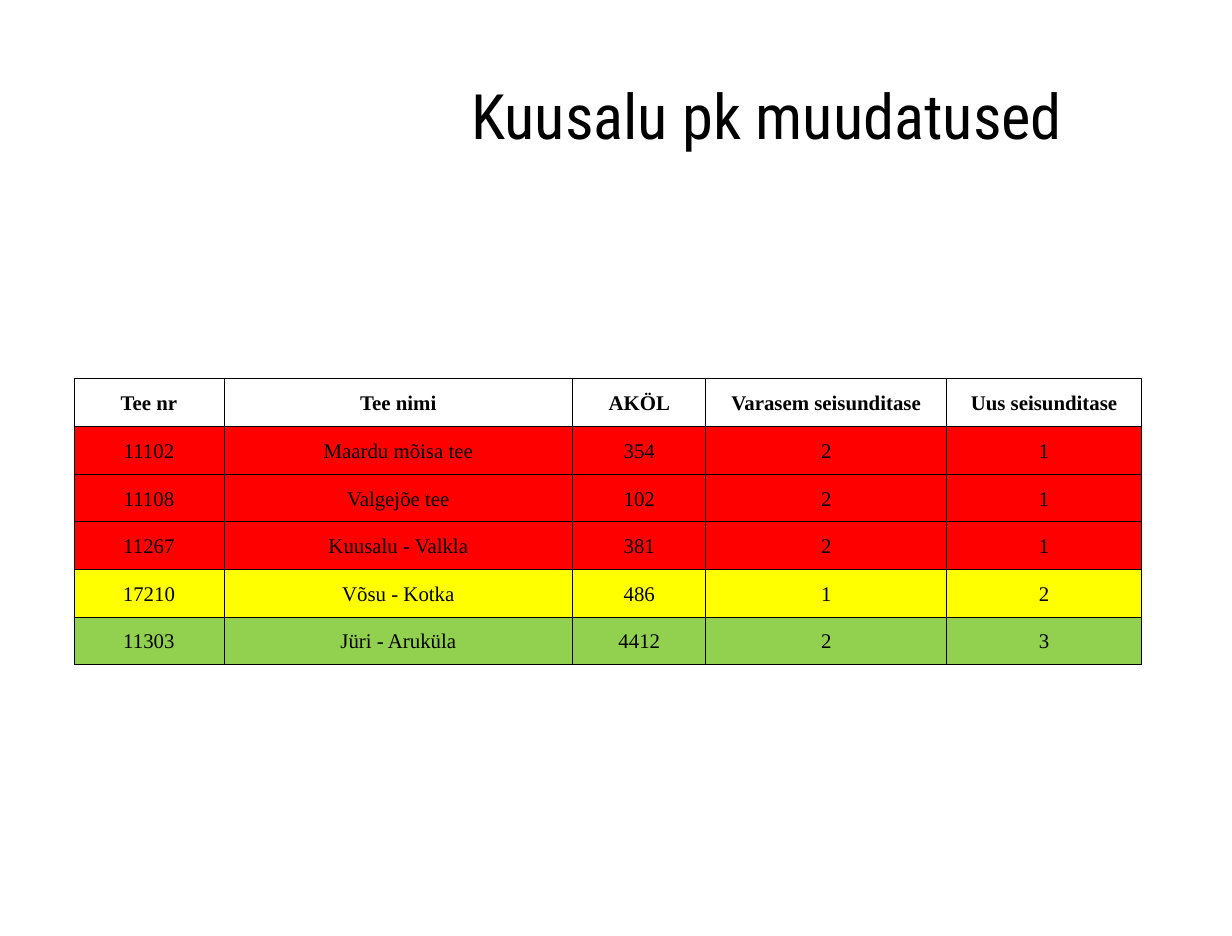
"""Build the slide listing road maintenance level changes in Kuusalu."""
from dataclasses import dataclass

from lxml.etree import SubElement
from pptx import Presentation
from pptx.dml.color import RGBColor as Color
from pptx.enum.text import MSO_ANCHOR as Anchor, MSO_AUTO_SIZE as AutoSize, PP_ALIGN as Align
from pptx.oxml.ns import qn
from pptx.util import Cm, Pt

PX = 7303.5


@dataclass(frozen=True)
class Theme:
    ink: str = "000000"
    red: str = "FF0000"
    yellow: str = "FFFF00"
    green: str = "92D050"
    title_font: str = "Roboto Condensed"
    table_font: str = "Times New Roman"
    title_size: int = 36
    table_size: int = 12
    border_width: float = 0.5


def px(length):
    return round(length * PX)


def style_paragraph(para, font_name, size, bold=False):
    para.alignment = Align.CENTER
    para.font.name = font_name
    para.font.size = Pt(size)
    para.font.bold = bold
    para.font.color.rgb = Color.from_string(theme.ink)


theme = Theme()
deck = Presentation()
deck.slide_width, deck.slide_height = Cm(25), Cm(19)
page = deck.slides.add_slide(deck.slide_layouts[5])

title = page.shapes.title
title.left, title.top, title.width, title.height = px(364), px(37), px(806), px(156)
title.text_frame.text = "Kuusalu pk muudatused"
title.text_frame.vertical_anchor = Anchor.MIDDLE
title.text_frame.auto_size = AutoSize.NONE
style_paragraph(title.text_frame.paragraphs[0], theme.title_font, theme.title_size)

road_rows = [
    (None, "Tee nr", "Tee nimi", "AKÖL", "Varasem seisunditase", "Uus seisunditase"),
    (theme.red, "11102", "Maardu mõisa tee", "354", "2", "1"),
    (theme.red, "11108", "Valgejõe tee", "102", "2", "1"),
    (theme.red, "11267", "Kuusalu - Valkla", "381", "2", "1"),
    (theme.yellow, "17210", "Võsu - Kotka", "486", "1", "2"),
    (theme.green, "11303", "Jüri - Aruküla", "4412", "2", "3"),
]
column_widths = [150, 349, 133, 241, 195]

table = page.shapes.add_table(
    len(road_rows), len(column_widths), px(74), px(379), px(sum(column_widths)), px(286)
).table
table.first_row = table.horz_banding = False
for column, width in zip(table.columns, column_widths):
    column.width = px(width)

for row_index, (fill_color, *values) in enumerate(road_rows):
    for column_index, value in enumerate(values):
        cell = table.cell(row_index, column_index)
        cell.text = value
        cell.vertical_anchor = Anchor.MIDDLE
        cell.margin_left = cell.margin_right = px(1)
        cell.margin_top = cell.margin_bottom = 0
        para = cell.text_frame.paragraphs[0]
        para.line_spacing = 1.1
        style_paragraph(para, theme.table_font, theme.table_size, bold=row_index == 0)

        cell_properties = cell._tc.get_or_add_tcPr()
        for side in ("a:lnL", "a:lnR", "a:lnT", "a:lnB"):
            border = SubElement(cell_properties, qn(side), w=str(Pt(theme.border_width)))
            border_fill = SubElement(border, qn("a:solidFill"))
            SubElement(border_fill, qn("a:srgbClr"), val=theme.ink)
        if fill_color:
            cell.fill.solid()
            cell.fill.fore_color.rgb = Color.from_string(fill_color)
        else:
            cell.fill.background()

deck.save("out.pptx")
